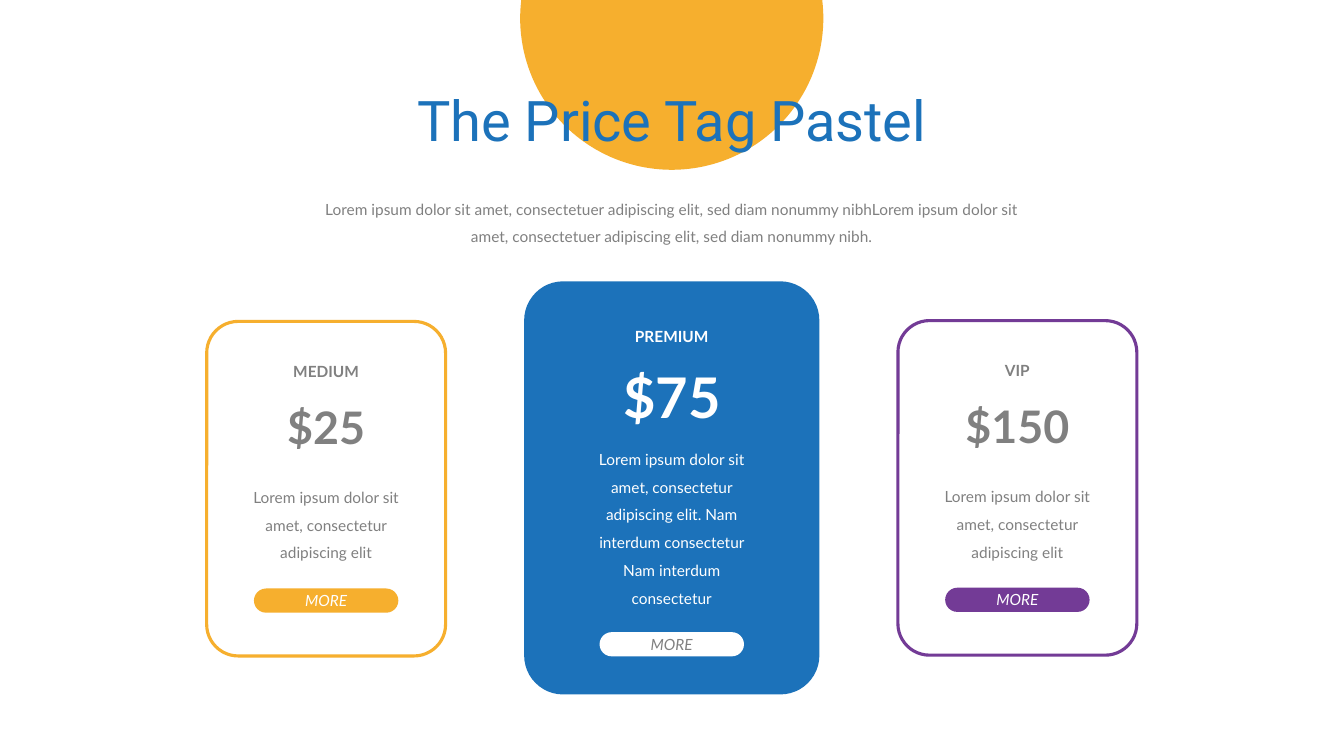
from math import asin, cos, pi, sin

from pptx import Presentation
from pptx.dml.color import RGBColor
from pptx.enum.shapes import MSO_SHAPE
from pptx.enum.text import MSO_ANCHOR, MSO_AUTO_SIZE, PP_ALIGN
from pptx.util import Cm, Pt

ORANGE = RGBColor(0xF6, 0xAF, 0x2E)
BLUE = RGBColor(0x1C, 0x72, 0xBA)
PURPLE = RGBColor(0x73, 0x3B, 0x96)
GREY = RGBColor(0x80, 0x80, 0x80)
WHITE = RGBColor(0xFF, 0xFF, 0xFF)


def write_text(shape, text, size=11, color=GREY, font="Lato", bold=False,
               italic=False, spacing=1.0, anchor=MSO_ANCHOR.TOP):
    frame = shape.text_frame
    frame.text = text
    frame.word_wrap = True
    frame.auto_size = MSO_AUTO_SIZE.NONE
    frame.vertical_anchor = anchor
    paragraph = frame.paragraphs[0]
    paragraph.alignment = PP_ALIGN.CENTER
    paragraph.line_spacing = spacing
    paragraph.space_before = Pt(0)
    run_font = paragraph.runs[0].font
    run_font.name = font
    run_font.size = Pt(size)
    run_font.bold = bold
    run_font.italic = italic
    run_font.color.rgb = color


def add_rounded_box(center, top, width, height, rounding, fill=None, line=None):
    shape = slide.shapes.add_shape(
        MSO_SHAPE.ROUNDED_RECTANGLE,
        Cm(center - width / 2), Cm(top), Cm(width), Cm(height))
    shape.adjustments[0] = rounding
    shape.shadow.inherit = False
    if fill is None:
        shape.fill.background()
    else:
        shape.fill.solid()
        shape.fill.fore_color.rgb = fill
    if line is None:
        shape.line.fill.background()
    else:
        shape.line.color.rgb = line
        shape.line.width = Pt(2.25)
    return shape


presentation = Presentation()
presentation.slide_width = Cm(33.87)
presentation.slide_height = Cm(19.05)
slide = presentation.slides.add_slide(presentation.slide_layouts[0])
MIDDLE = 16.93

# Title and introduction
title = slide.shapes.title
introduction = slide.placeholders[1]
for placeholder, top, width, height in (
        (title, 2.03, 13.94, 1.96), (introduction, 4.67, 18.82, 1.68)):
    placeholder.left, placeholder.top = Cm(MIDDLE - width / 2), Cm(top)
    placeholder.width, placeholder.height = Cm(width), Cm(height)
write_text(title, "The Price Tag Pastel", size=40, color=BLUE, font="Roboto")
write_text(
    introduction,
    "Lorem ipsum dolor sit amet, consectetuer adipiscing elit, sed diam "
    "nonummy nibhLorem ipsum dolor sit amet, consectetuer adipiscing elit, "
    "sed diam nonummy nibh.", spacing=1.5)

# Sun behind the title, cut off by the top edge of the slide
RADIUS, SUN_Y, STEPS = 3.82, 0.46, 90
start = -asin(SUN_Y / RADIUS)
angles = [start + (pi - 2 * start) * step / STEPS for step in range(STEPS + 1)]
points = [(Cm(MIDDLE + RADIUS * cos(angle)), Cm(max(0, SUN_Y + RADIUS * sin(angle))))
          for angle in angles]
builder = slide.shapes.build_freeform(*points[0])
builder.add_line_segments(points[1:])
sun = builder.convert_to_shape()
sun.shadow.inherit = False
sun.fill.solid()
sun.fill.fore_color.rgb = ORANGE
sun.line.fill.background()
title.element.addprevious(sun.element)

# Price cards: text rows are (offset from the card top, height)
CARD_STEP, TEXT_WIDTH = 8.71, 5.05
SMALL = dict(width=6.02, height=8.43, price_size=32, color=GREY, more_color=WHITE,
             rows=((0.89, 0.74), (1.85, 1.63), (3.84, 2.36)), button_offset=6.73)
LARGE = dict(width=7.44, height=10.41, price_size=40, color=WHITE, more_color=GREY,
             rows=((1.02, 0.74), (1.93, 1.96), (3.89, 4.5)), button_offset=8.84)
SHORT_TEXT = "Lorem ipsum dolor sit amet, consectetur adipiscing elit"
LONG_TEXT = SHORT_TEXT + ". Nam interdum consectetur Nam interdum consectetur"
cards = (
    ("MEDIUM", "$25", SHORT_TEXT, 8.1, SMALL, None, ORANGE, ORANGE),
    ("PREMIUM", "$75", LONG_TEXT, 7.09, LARGE, BLUE, None, WHITE),
    ("VIP", "$150", SHORT_TEXT, 8.08, SMALL, None, PURPLE, PURPLE),
)
for index, (name, price, details, top, style, fill, line, button_fill) in enumerate(cards):
    center = MIDDLE + (index - 1) * CARD_STEP
    add_rounded_box(center, top, style["width"], style["height"], 0.132, fill, line)

    # Name, price and details
    formats = (dict(bold=True), dict(bold=True, size=style["price_size"]),
               dict(spacing=1.5))
    for text, (offset, height), text_format in zip(
            (name, price, details), style["rows"], formats):
        box = slide.shapes.add_textbox(
            Cm(center - TEXT_WIDTH / 2), Cm(top + offset), Cm(TEXT_WIDTH), Cm(height))
        write_text(box, text, color=style["color"], **text_format)

    # Button
    button = add_rounded_box(center, top + style["button_offset"], 3.64, 0.61, 0.5,
                             button_fill)
    button.text_frame.margin_top = button.text_frame.margin_bottom = 0
    write_text(button, "MORE", color=style["more_color"], italic=True,
               anchor=MSO_ANCHOR.MIDDLE)

presentation.save("out.pptx")
